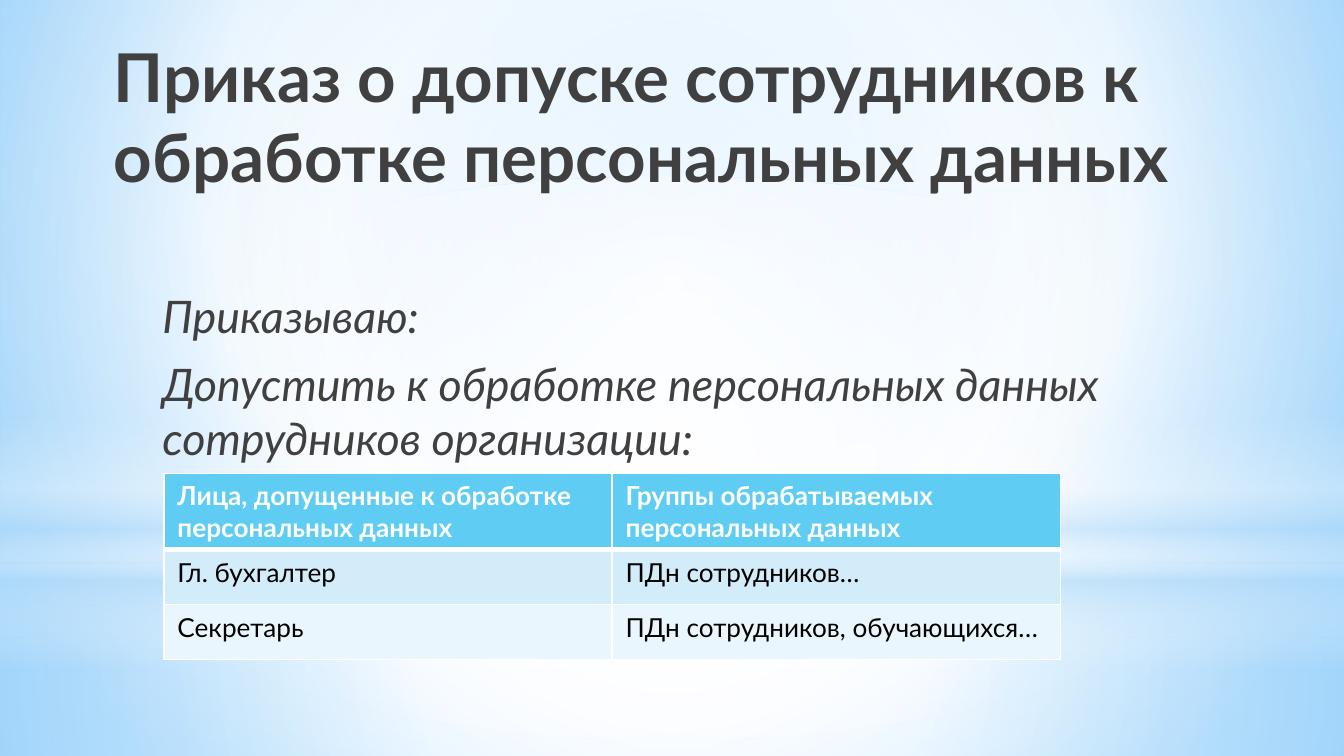
"""Build a slide about the order admitting staff to personal data processing."""
from dataclasses import dataclass
from typing import Any, Optional

from pptx import Presentation
from pptx.dml.color import RGBColor
from pptx.enum.shapes import MSO_SHAPE
from pptx.enum.text import MSO_ANCHOR, MSO_AUTO_SIZE, PP_ALIGN
from pptx.oxml import parse_xml
from pptx.oxml.ns import nsdecls, qn
from pptx.util import Cm, Pt

WHITE = RGBColor(0xFF, 0xFF, 0xFF)
BLACK = RGBColor(0, 0, 0)
DARK = RGBColor(0x40, 0x40, 0x40)
PALE_BLUE = RGBColor(0xB4, 0xDC, 0xFA)
SKY = RGBColor(0x9E, 0xD5, 0xFF)
DEEP_SKY = RGBColor(0x5B, 0xB9, 0xFF)
HEADER = RGBColor(0x5E, 0xCC, 0xF3)
BANDS = (RGBColor(0xD2, 0xEC, 0xFA), RGBColor(0xEA, 0xF6, 0xFD))

FONT = "Lato"
WIDTH, HEIGHT = 25.4, 14.28
ROW_HEIGHT = 1.04


@dataclass(frozen=True)
class Stop:
    position: int
    color: RGBColor
    opacity: int = 100


@dataclass(frozen=True)
class Gradient:
    stops: tuple[Stop, ...]
    focus: Optional[tuple[int, int, int, int]] = (50, 50, 50, 50)


@dataclass(frozen=True)
class Glow:
    shape: MSO_SHAPE
    top: float
    height: float
    gradient: Gradient


BACKGROUND = Gradient(
    (Stop(0, SKY), Stop(60, WHITE), Stop(100, DEEP_SKY)), (20, 10, 20, 60))

GLOWS = (
    Glow(MSO_SHAPE.RECTANGLE, 10.64, 3.65, Gradient(
        (Stop(0, WHITE, 91), Stop(37, WHITE, 76), Stop(100, PALE_BLUE, 79)))),
    Glow(MSO_SHAPE.RECTANGLE, 0, 10.64, Gradient(
        (Stop(0, WHITE, 89), Stop(48, WHITE, 62), Stop(100, PALE_BLUE, 79)))),
    Glow(MSO_SHAPE.RECTANGLE, 7.85, 4.77, Gradient(
        (Stop(0, WHITE, 0), Stop(29, WHITE, 30), Stop(45, PALE_BLUE, 40),
         Stop(55, WHITE, 26), Stop(65, PALE_BLUE, 60), Stop(100, WHITE, 0)), None)),
    Glow(MSO_SHAPE.OVAL, 3.33, 10.64, Gradient(
        (Stop(0, WHITE), Stop(56, WHITE, 0)))),
)

TITLE = "Приказ о допуске сотрудников к обработке персональных данных"
BODY = (
    "Приказываю:",
    "Допустить к обработке персональных данных сотрудников организации:",
)
ROWS = (
    ("Лица, допущенные к обработке персональных данных",
     "Группы обрабатываемых персональных данных"),
    ("Гл. бухгалтер", "ПДн сотрудников…"),
    ("Секретарь", "ПДн сотрудников, обучающихся…"),
)


def set_attrs(target: Any, values: dict[str, Any]) -> None:
    for name, value in values.items():
        setattr(target, name, value)


def add_text(p: Any, text: str, size: float, color: RGBColor, **style: bool) -> None:
    r = p.add_run()
    r.text = text
    set_attrs(r.font, {"name": FONT, "size": Pt(size), **style})
    r.font.color.rgb = color


def set_gradient(element: Any, fill: Any, gradient: Gradient) -> None:
    stops = "".join(
        f'<a:gs pos="{stop.position * 1000}"><a:srgbClr val="{stop.color}">'
        f'<a:alpha val="{stop.opacity * 1000}"/></a:srgbClr></a:gs>'
        for stop in gradient.stops)
    if gradient.focus is None:
        direction = '<a:lin ang="5400000" scaled="0"/>'
    else:
        sides = " ".join(
            f'{side}="{value * 1000}"' for side, value in zip("ltrb", gradient.focus))
        direction = f'<a:path path="circle"><a:fillToRect {sides}/></a:path>'
    fill.gradient()
    old = next(element.iter(qn("a:gradFill")))
    old.getparent().replace(old, parse_xml(
        f'<a:gradFill rotWithShape="1" {nsdecls("a")}>'
        f'<a:gsLst>{stops}</a:gsLst>{direction}</a:gradFill>'))


def add_glow(s: Any, glow: Glow) -> None:
    sp = s.shapes.add_shape(glow.shape, 0, Cm(glow.top), Cm(WIDTH), Cm(glow.height))
    sp.shadow.inherit = False
    sp.line.fill.background()
    set_gradient(sp._element, sp.fill, glow.gradient)


def place_title(s: Any) -> None:
    sp = s.shapes.title
    s.shapes._spTree.append(sp._element)
    set_attrs(sp, {"left": Cm(1.9), "top": Cm(0.53), "width": Cm(22.2), "height": Cm(4.6)})
    tf = sp.text_frame
    set_attrs(tf, {"word_wrap": True, "auto_size": MSO_AUTO_SIZE.NONE,
                   "vertical_anchor": MSO_ANCHOR.TOP})
    p = tf.paragraphs[0]
    p.alignment = PP_ALIGN.LEFT
    add_text(p, TITLE, 36, DARK, bold=True)


def add_body(s: Any) -> None:
    tf = s.shapes.add_textbox(Cm(2.69), Cm(5.33), Cm(20), Cm(7.19)).text_frame
    set_attrs(tf, {"word_wrap": True, "margin_left": Cm(0.38)})
    for i, text in enumerate(BODY):
        p = tf.paragraphs[0] if i == 0 else tf.add_paragraph()
        set_attrs(p, {"space_before": Pt(4.8), "space_after": Pt(3)})
        add_text(p, text, 24, DARK, italic=True)


def set_borders(cell: Any, bottom: float, top: float) -> None:
    tcPr = cell._tc.get_or_add_tcPr()
    for side, width in {"L": 1, "R": 1, "T": top, "B": bottom}.items():
        tcPr.append(parse_xml(
            f'<a:ln{side} w="{Pt(width)}" {nsdecls("a")}><a:solidFill>'
            f'<a:srgbClr val="{WHITE}"/></a:solidFill></a:ln{side}>'))


def add_staff_table(s: Any) -> None:
    table = s.shapes.add_table(len(ROWS), len(ROWS[0]), Cm(3.1), Cm(8.94), Cm(16.94),
                               Cm(ROW_HEIGHT * len(ROWS))).table
    for i, row in enumerate(ROWS):
        header = i == 0
        for j, text in enumerate(row):
            cell = table.cell(i, j)
            set_borders(cell, bottom=3 if header else 1, top=3 if i == 1 else 1)
            cell.fill.solid()
            cell.fill.fore_color.rgb = HEADER if header else BANDS[i - 1]
            add_text(cell.text_frame.paragraphs[0], text, 14,
                     WHITE if header else BLACK, bold=header)


def main() -> None:
    prs = Presentation()
    set_attrs(prs, {"slide_width": Cm(WIDTH), "slide_height": Cm(HEIGHT)})
    s = prs.slides.add_slide(prs.slide_layouts[5])
    set_gradient(s._element, s.background.fill, BACKGROUND)
    for glow in GLOWS:
        add_glow(s, glow)
    place_title(s)
    add_body(s)
    add_staff_table(s)
    prs.save("out.pptx")


if __name__ == "__main__":
    main()
